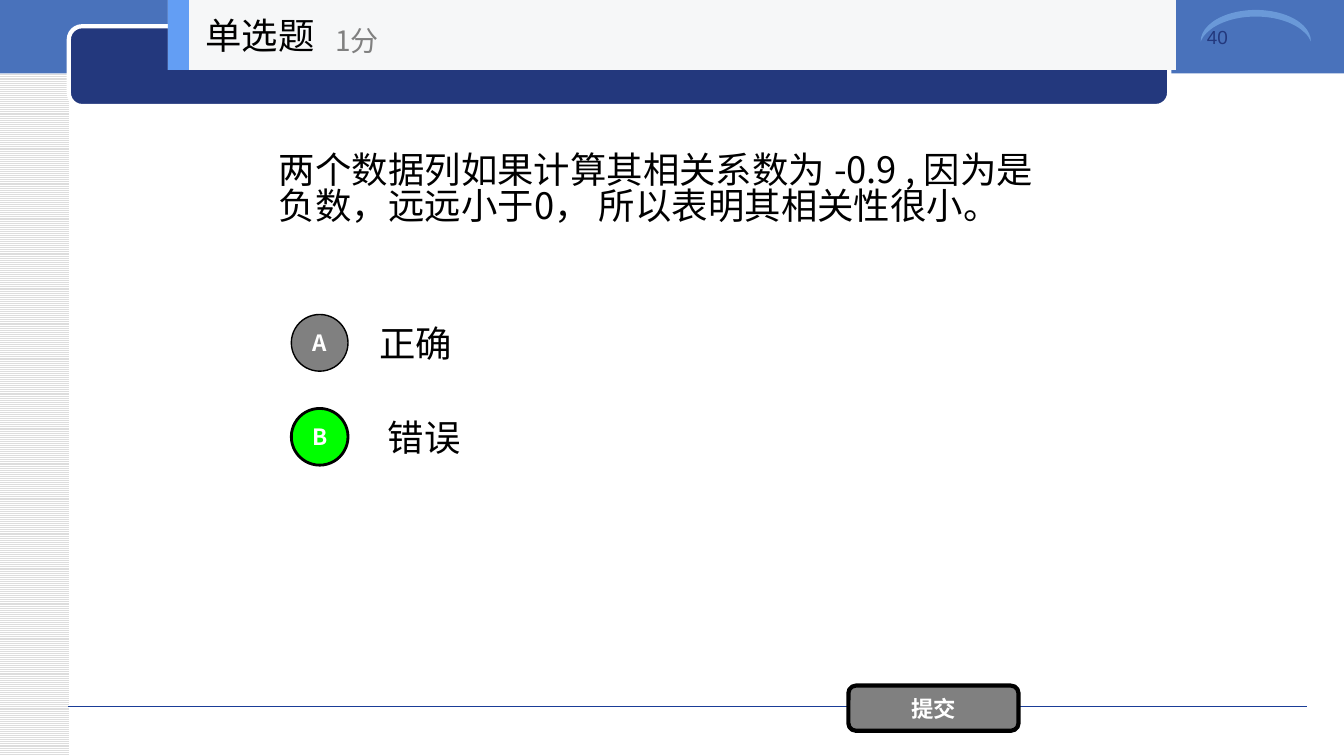
from lxml import etree
from pptx import Presentation
from pptx.dml.color import RGBColor
from pptx.enum.dml import MSO_PATTERN
from pptx.enum.shapes import MSO_CONNECTOR, MSO_SHAPE
from pptx.enum.text import MSO_ANCHOR, PP_ALIGN
from pptx.oxml.ns import qn
from pptx.util import Inches, Pt

RECTANGLE = MSO_SHAPE.RECTANGLE
ROUNDED = MSO_SHAPE.ROUNDED_RECTANGLE
OVAL = MSO_SHAPE.OVAL
MOON = MSO_SHAPE.MOON
STRAIGHT = MSO_CONNECTOR.STRAIGHT
STRIPES = MSO_PATTERN.LIGHT_HORIZONTAL
TOP, MIDDLE = MSO_ANCHOR.TOP, MSO_ANCHOR.MIDDLE
LEFT, CENTER = PP_ALIGN.LEFT, PP_ALIGN.CENTER

BLACK = RGBColor(0x00, 0x00, 0x00)
WHITE = RGBColor(0xFF, 0xFF, 0xFF)
GRAY = RGBColor(0x80, 0x80, 0x80)
STRIPE = RGBColor(0xDD, 0xDD, 0xDD)
GREEN = RGBColor(0x00, 0xFF, 0x00)
BAND = RGBColor(0x49, 0x72, 0xBB)
NAVY = RGBColor(0x23, 0x38, 0x7D)
RULE = RGBColor(0x1A, 0x3D, 0x97)
CRESCENT = RGBColor(0x6A, 0x99, 0xD8)
HEADER = RGBColor(0xF6, 0xF7, 0xF8)
ACCENT = RGBColor(0x63, 0x9E, 0xF4)

COLUMNS, ROWS = 128, 72
OPTIONS = [("A", "正确", GRAY, 1), ("B", " 错误", GREEN, 2)]


class QuizSlide:
    font = "Noto Sans CJK SC"

    def __init__(self, presentation):
        self.column = presentation.slide_width / COLUMNS
        self.row = presentation.slide_height / ROWS
        self.slide = presentation.slides.add_slide(presentation.slide_layouts[5])

    def box(self, left, top, width, height):
        return (round(left * self.column), round(top * self.row),
                round(width * self.column), round(height * self.row))

    def add_text(self, shape, text, size, color, bold=False, align=LEFT,
                 anchor=MIDDLE, font=font):
        frame = shape.text_frame
        frame.word_wrap = True
        frame.vertical_anchor = anchor
        paragraph = frame.paragraphs[0]
        paragraph.alignment = align
        run = paragraph.add_run()
        run.text = text
        run.font.size = Pt(size)
        run.font.bold = bold
        run.font.color.rgb = color
        run.font.name = font
        properties = run._r.get_or_add_rPr()
        east_asian = etree.SubElement(properties, qn("a:ea"))
        east_asian.set("typeface", font)
        return paragraph

    def shape(self, kind, place, fill, line=None, width=0, adjustment=None):
        shape = self.slide.shapes.add_shape(kind, *self.box(*place))
        shape.shadow.inherit = False
        shape.fill.solid()
        shape.fill.fore_color.rgb = fill
        if line is None:
            shape.line.fill.background()
        else:
            shape.line.color.rgb = line
            shape.line.width = Pt(width)
        if adjustment is not None:
            shape.adjustments[0] = adjustment
        return shape

    def striped(self, place, foreground, background):
        fill = self.shape(RECTANGLE, place, background).fill
        fill.patterned()
        fill.pattern = STRIPES
        fill.fore_color.rgb = foreground
        fill.back_color.rgb = background

    def button(self, kind, place, text, fill, width):
        shape = self.shape(kind, place, fill, BLACK, width)
        frame = shape.text_frame
        frame.margin_left = frame.margin_right = 0
        frame.margin_top = frame.margin_bottom = 0
        self.add_text(shape, text, 16, WHITE, bold=True, align=CENTER)

    def label(self, place, text, size, color, **style):
        shape = self.slide.shapes.add_textbox(*self.box(*place))
        self.add_text(shape, text, size, color, **style)

    def question(self, place, text):
        title = self.slide.shapes.title
        title.left, title.top, title.width, title.height = self.box(*place)
        paragraph = self.add_text(title, text, 26, BLACK)
        paragraph.line_spacing = 0.84

    def rule(self, left, right, top, color):
        start, level, length, _ = self.box(left, top, right - left, 0)
        line = self.slide.shapes.add_connector(
            STRAIGHT, start, level, start + length, level)
        line.line.color.rgb = color
        line.line.width = Pt(0.5)
        etree.SubElement(line._element.spPr, qn("a:effectLst"))


def main():
    presentation = Presentation()
    presentation.slide_width = Inches(13.33)
    presentation.slide_height = Inches(7.5)
    quiz = QuizSlide(presentation)

    quiz.striped((0, 0, 6.55, ROWS), STRIPE, WHITE)
    quiz.shape(RECTANGLE, (0, 0, COLUMNS, 7), BAND)
    quiz.rule(6.5, 124.5, 67.3, RULE)
    quiz.shape(ROUNDED, (6.55, 2.5, 104.8, 7.6), NAVY, WHITE, 3)
    crescent = quiz.shape(MOON, (118.1, -2.8, 3, 10.5), CRESCENT, adjustment=0.21)
    crescent.rotation = 90
    quiz.label((114, 2, 11.6, 6.8), "40", 13.5, NAVY, anchor=TOP, font="Arial")

    quiz.question((25.6, 6.9, 76.8, 22.5),
                  "两个数据列如果计算其相关系数为 -0.9 , 因为是负数，远远小于0， 所以表明其相关性很小。")
    for index, (letter, answer, fill, width) in enumerate(OPTIONS):
        top = 29.3 + 8.95 * index
        quiz.label((35.2, top, 67.2, 6.7), answer, 26, BLACK)
        quiz.button(OVAL, (27.75, top + 0.65, 5.4, 5.4), letter, fill, width)
    quiz.button(ROUNDED, (80.8, 65.3, 16.2, 4.3), "提交", GRAY, 3)

    quiz.shape(RECTANGLE, (16, 0, 96, 6.65), HEADER)
    quiz.shape(RECTANGLE, (16, 0, 2, 6.65), ACCENT)
    quiz.label((18.6, 0, 20, 6.65), "单选题", 26, BLACK)
    quiz.label((31, 1.15, 24, 5.4), "1分", 20, GRAY)

    presentation.save("out.pptx")


if __name__ == "__main__":
    main()
